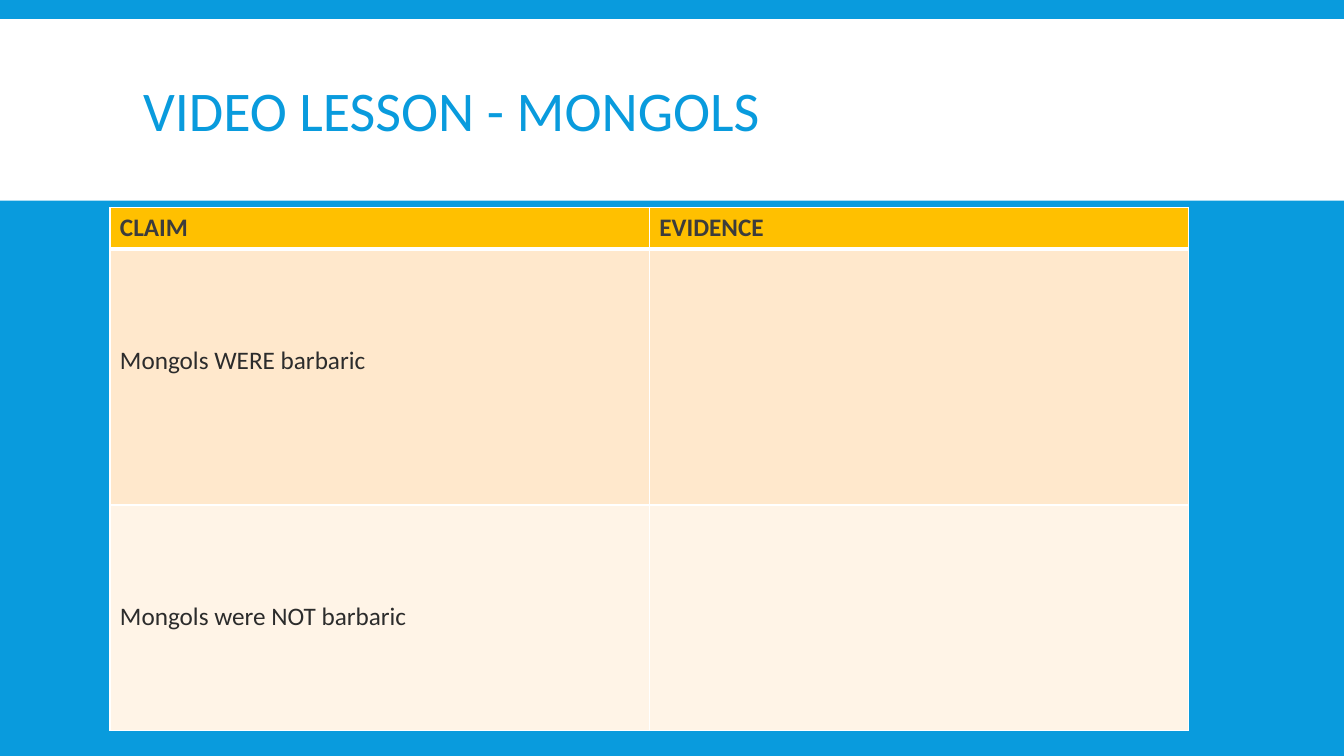
"""Build a claim and evidence slide about the Mongols."""
from dataclasses import dataclass

from lxml import etree
from pptx import Presentation
from pptx.dml.color import RGBColor as RGB
from pptx.enum.shapes import MSO_SHAPE as SHAPE
from pptx.enum.text import MSO_ANCHOR as ANCHOR, PP_ALIGN as ALIGN
from pptx.oxml.ns import qn
from pptx.util import Inches, Pt


@dataclass(frozen=True)
class Theme:
    """Colours, font and type sizes of the slide."""
    font: str = "Calibri"
    blue: str = "099BDD"
    white: str = "FFFFFF"
    header_fill: str = "FFC000"
    header_text: str = "3C3C3C"
    body_fills: tuple = ("FFE8CC", "FFF4E7")
    body_text: str = "2C2C2C"
    title_size: int = 40
    table_size: int = 18


THEME = Theme()
ROWS = [
    ("CLAIM", "EVIDENCE"),
    ("Mongols WERE barbaric", ""),
    ("Mongols were NOT barbaric", ""),
]
ROW_HEIGHTS = (0.41, 2.54, 2.24)
CLAIM_INSET = 0.96


def style_font(font, size, color, bold=False):
    """Apply the theme font with a size, colour and weight."""
    font.name = THEME.font
    font.size = Pt(size)
    font.bold = bold
    font.color.rgb = RGB.from_string(color)


def set_borders(cell, bottom, top):
    """Draw white borders of the given top and bottom widths."""
    tcPr = cell._tc.get_or_add_tcPr()
    widths = {"a:lnL": 1, "a:lnR": 1, "a:lnT": top, "a:lnB": bottom}
    for i, (tag, width) in enumerate(widths.items()):
        ln = etree.Element(qn(tag), w=str(Pt(width)))
        fill = etree.SubElement(ln, qn("a:solidFill"))
        etree.SubElement(fill, qn("a:srgbClr"), val=THEME.white)
        tcPr.insert(i, ln)


def add_title(s, text):
    """Fill and place the title over its white band."""
    title = s.shapes.title
    title.left, title.top = Inches(1.32), Inches(0.31)
    title.width, title.height = Inches(10.7), Inches(1.65)
    tf = title.text_frame
    tf.text = text
    tf.vertical_anchor = ANCHOR.MIDDLE
    p = tf.paragraphs[0]
    p.alignment = ALIGN.LEFT
    p.line_spacing = 0.85
    style_font(p.runs[0].font, THEME.title_size, THEME.blue)

    band = s.shapes.add_shape(SHAPE.RECTANGLE, 0, Inches(0.19),
                              Inches(13.33), Inches(1.8))
    band.shadow.inherit = False
    band.fill.solid()
    band.fill.fore_color.rgb = RGB.from_string(THEME.white)
    band.line.fill.background()
    title._element.addprevious(band._element)


def fill_cell(cell, text, row):
    """Write and format one cell according to its row."""
    header = row == 0
    fill = THEME.header_fill if header else THEME.body_fills[row - 1]
    color = THEME.header_text if header else THEME.body_text
    cell.fill.solid()
    cell.fill.fore_color.rgb = RGB.from_string(fill)
    set_borders(cell, bottom=3 if header else 1, top=3 if row == 1 else 1)
    cell.text = text
    if text and not header:
        cell.margin_top = Inches(CLAIM_INSET)
    p = cell.text_frame.paragraphs[0]
    for r in p.runs:
        style_font(r.font, THEME.table_size, color, header)


def add_claim_table(s):
    """Add the table of claims and evidence."""
    frame = s.shapes.add_table(len(ROWS), len(ROWS[0]), Inches(1.09),
                               Inches(2.06), Inches(10.7),
                               Inches(sum(ROW_HEIGHTS)))
    table = frame.table
    for i, (texts, height) in enumerate(zip(ROWS, ROW_HEIGHTS)):
        table.rows[i].height = Inches(height)
        for j, text in enumerate(texts):
            fill_cell(table.cell(i, j), text, i)


def main():
    """Create and save the presentation."""
    prs = Presentation()
    prs.slide_width, prs.slide_height = Inches(13.33), Inches(7.5)
    s = prs.slides.add_slide(prs.slide_layouts[5])
    s.background.fill.solid()
    s.background.fill.fore_color.rgb = RGB.from_string(THEME.blue)
    add_title(s, "VIDEO LESSON - MONGOLS")
    add_claim_table(s)
    prs.save("out.pptx")


if __name__ == "__main__":
    main()
